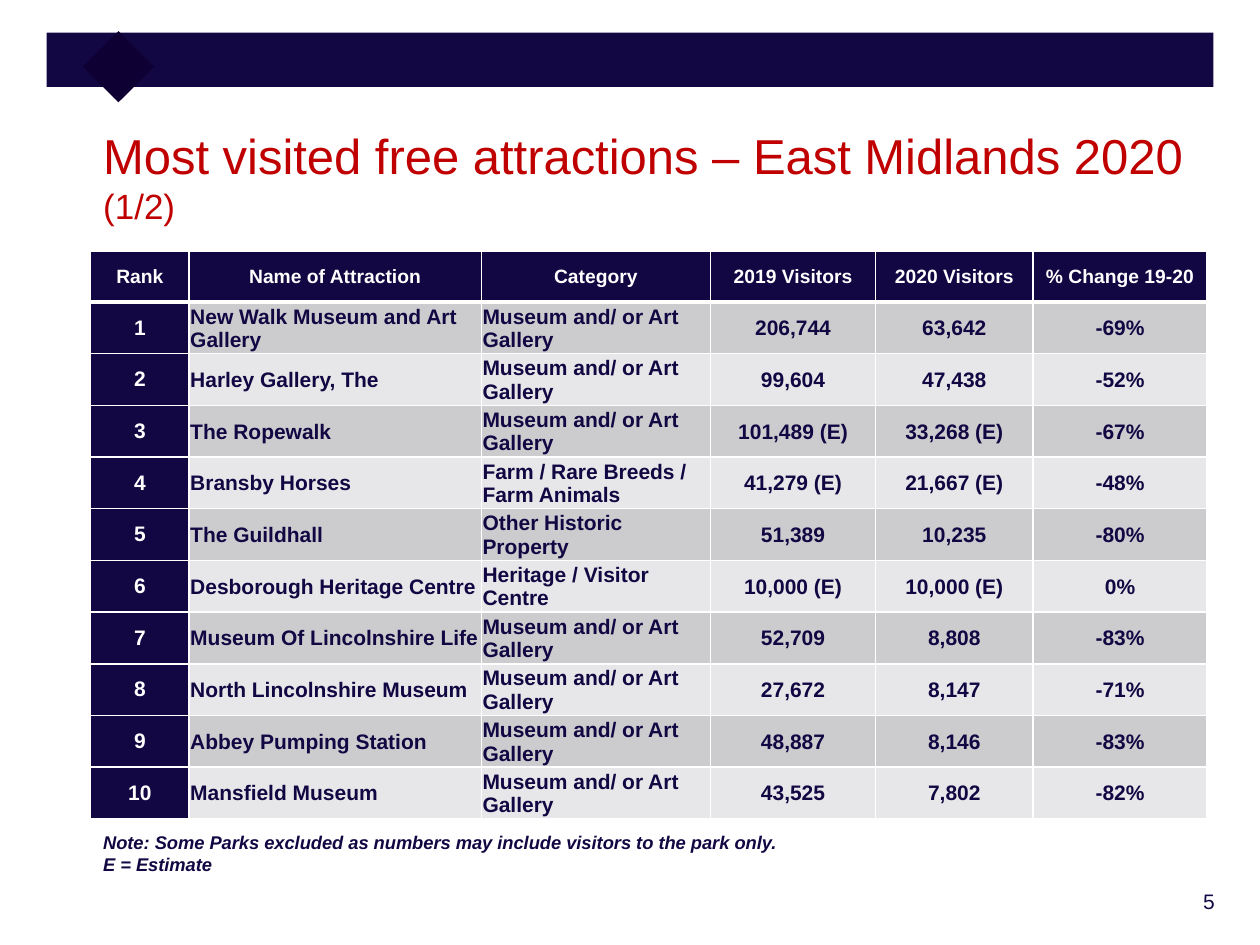
from lxml.etree import SubElement
from pptx import Presentation
from pptx.dml.color import RGBColor
from pptx.enum.shapes import MSO_SHAPE
from pptx.enum.text import MSO_ANCHOR as ANCHOR, PP_ALIGN as ALIGN
from pptx.oxml.ns import qn
from pptx.util import Inches, Pt

NAVY = RGBColor(0x12, 0x07, 0x42)
DARK = RGBColor(0x0E, 0x00, 0x33)
RED = RGBColor(0xC0, 0x00, 0x00)
WHITE = RGBColor(0xFF, 0xFF, 0xFF)
BANDS = (RGBColor(0xCC, 0xCC, 0xCF), RGBColor(0xE7, 0xE7, 0xE9))

COL_WIDTHS = (0.78, 2.32, 1.82, 1.31, 1.25, 1.38)
TABLE_HEIGHT = 4.47
HEADERS = ("Rank", "Name of Attraction", "Category", "2019 Visitors",
           "2020 Visitors", "% Change 19-20")
MUSEUM = "Museum and/ or Art Gallery"
ATTRACTIONS = (
    ("New Walk Museum and Art Gallery", MUSEUM, "206,744", "63,642", "-69%"),
    ("Harley Gallery, The", MUSEUM, "99,604", "47,438", "-52%"),
    ("The Ropewalk", MUSEUM, "101,489 (E)", "33,268 (E)", "-67%"),
    ("Bransby Horses", "Farm / Rare Breeds / Farm Animals",
     "41,279 (E)", "21,667 (E)", "-48%"),
    ("The Guildhall", "Other Historic Property", "51,389", "10,235", "-80%"),
    ("Desborough Heritage Centre", "Heritage / Visitor Centre",
     "10,000 (E)", "10,000 (E)", "0%"),
    ("Museum Of Lincolnshire Life", MUSEUM, "52,709", "8,808", "-83%"),
    ("North Lincolnshire Museum", MUSEUM, "27,672", "8,147", "-71%"),
    ("Abbey Pumping Station", MUSEUM, "48,887", "8,146", "-83%"),
    ("Mansfield Museum", MUSEUM, "43,525", "7,802", "-82%"),
)


def set_font(font, size, color, bold=False, italic=False):
    """Apply the slide's typeface with a size, colour and style."""
    font.name = "Arial"
    font.size = Pt(size)
    font.color.rgb = color
    font.bold = bold
    font.italic = italic


def add_block(slide, left, top, width, height, color, rotation=0):
    """Add a plain filled rectangle."""
    sp = slide.shapes.add_shape(MSO_SHAPE.RECTANGLE, Inches(left), Inches(top),
                                Inches(width), Inches(height))
    sp.shadow.inherit = False
    sp.fill.solid()
    sp.fill.fore_color.rgb = color
    sp.line.fill.background()
    sp.rotation = rotation


def add_text(slide, left, top, width, height, lines, size, color,
             align=ALIGN.LEFT, **style):
    """Add a wrapping text box with one paragraph per line and return its frame."""
    sp = slide.shapes.add_textbox(Inches(left), Inches(top),
                                  Inches(width), Inches(height))
    tf = sp.text_frame
    tf.word_wrap = True
    tf.text = "\n".join(lines)
    for p in tf.paragraphs:
        p.alignment = align
        set_font(p.font, size, color, **style)
    return tf


def add_title(slide):
    """Add the red heading with its smaller part number."""
    tf = add_text(slide, 0.72, 0.95, 8.91, 0.89,
                  ["Most visited free attractions – East Midlands 2020"], 28, RED)
    tf.vertical_anchor = ANCHOR.MIDDLE
    p = tf.paragraphs[0]
    p.add_line_break()
    r = p.add_run()
    r.text = "(1/2)"
    r.font.size = Pt(20)


def set_borders(cell, top=1, bottom=1):
    """Draw white borders of the given point widths around a cell."""
    tc_pr = cell._tc.get_or_add_tcPr()
    for side, width in (("L", 1), ("R", 1), ("T", top), ("B", bottom)):
        ln = SubElement(tc_pr, qn(f"a:ln{side}"), w=str(Pt(width)))
        fill = SubElement(ln, qn("a:solidFill"))
        SubElement(fill, qn("a:srgbClr"), val=str(WHITE))


def style_cell(cell, row, col):
    """Style a cell by its place: header row, rank column or banded body."""
    set_borders(cell, top=3 if row == 1 else 1, bottom=3 if row == 0 else 1)
    heading = row == 0 or col == 0
    cell.fill.solid()
    cell.fill.fore_color.rgb = NAVY if heading else BANDS[(row - 1) % 2]
    cell.vertical_anchor = ANCHOR.MIDDLE
    cell.margin_left = cell.margin_right = Inches(0.08 if heading else 0.01)
    if not heading:
        cell.margin_top = Inches(0.01)
        cell.margin_bottom = 0
    p = cell.text_frame.paragraphs[0]
    p.alignment = ALIGN.LEFT if row and col in (1, 2) else ALIGN.CENTER
    set_font(p.font, 12 if row else 11, WHITE if heading else NAVY, bold=True)


def add_attractions_table(slide):
    """Add the ranked table of attractions."""
    ranked = [(str(rank), *item) for rank, item in enumerate(ATTRACTIONS, 1)]
    rows = [HEADERS, *ranked]
    table = slide.shapes.add_table(
        len(rows), len(HEADERS), Inches(0.72), Inches(1.99),
        Inches(sum(COL_WIDTHS)), Inches(TABLE_HEIGHT)).table
    for column, width in zip(table.columns, COL_WIDTHS):
        column.width = Inches(width)
    for i, values in enumerate(rows):
        for j, value in enumerate(values):
            cell = table.cell(i, j)
            cell.text = value
            style_cell(cell, i, j)


def main():
    """Build the slide and save it."""
    prs = Presentation()
    prs.slide_width, prs.slide_height = Inches(10), Inches(7.5)
    slide = prs.slides.add_slide(prs.slide_layouts[6])
    add_text(slide, 8.53, 7, 1.21, 0.36, ["5"], 12, NAVY, ALIGN.RIGHT)
    add_block(slide, 0.37, 0.26, 9.26, 0.43, NAVY)
    add_block(slide, 0.74, 0.33, 0.4, 0.4, DARK, rotation=45)
    add_title(slide)
    add_attractions_table(slide)
    add_text(slide, 0.72, 6.55, 8.65, 0.45,
             ["Note: Some Parks excluded as numbers may include visitors to the park only.",
              "E = Estimate"], 10.5, NAVY, bold=True, italic=True)
    prs.save("out.pptx")


if __name__ == "__main__":
    main()
